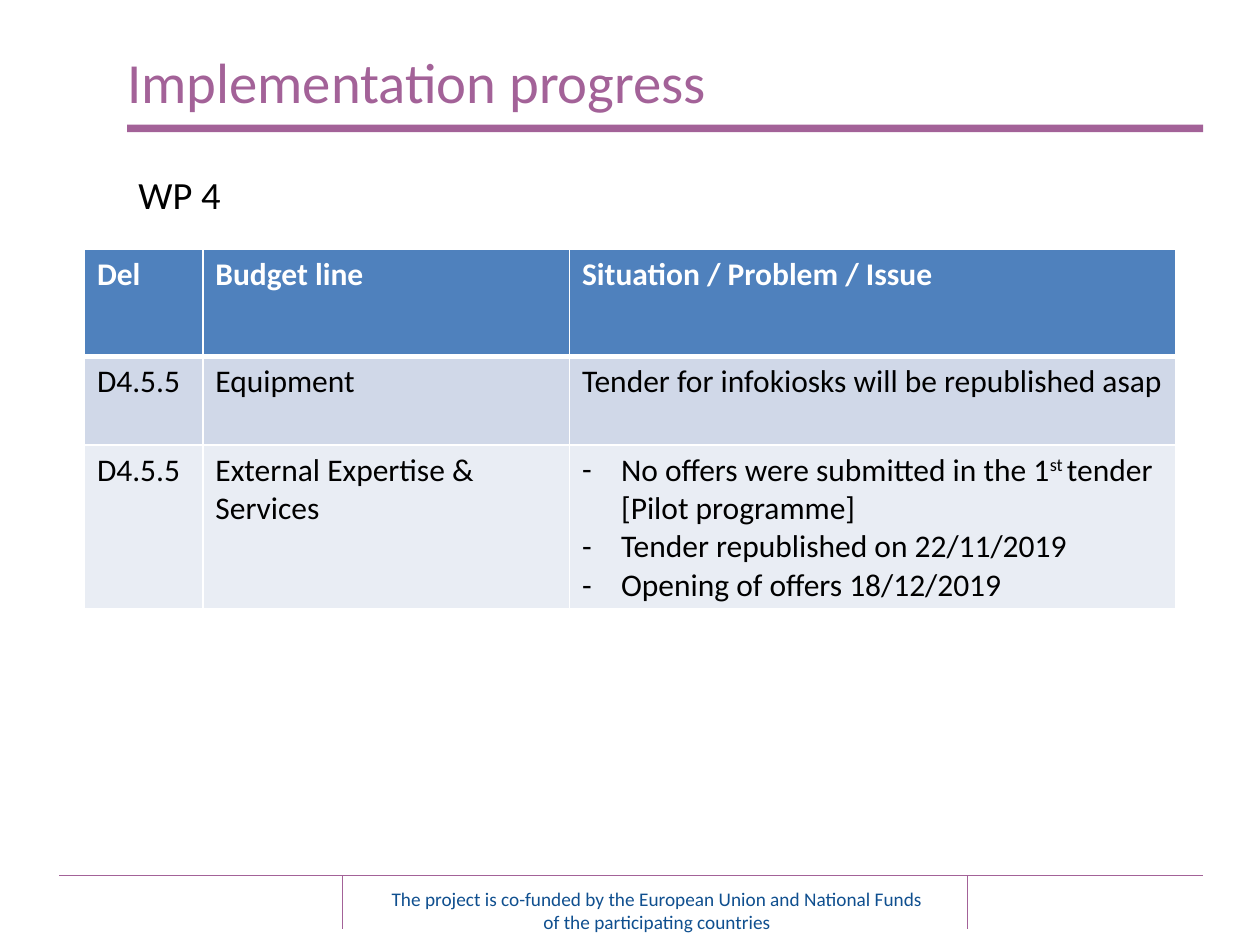
from lxml import etree
from pptx import Presentation
from pptx.dml.color import RGBColor
from pptx.enum.shapes import MSO_CONNECTOR, MSO_SHAPE
from pptx.enum.text import MSO_ANCHOR, PP_ALIGN
from pptx.oxml.ns import qn
from pptx.util import Emu, Inches, Pt

STRAIGHT, RECT = MSO_CONNECTOR.STRAIGHT, MSO_SHAPE.RECTANGLE
MIDDLE, LEFT, CENTER = MSO_ANCHOR.MIDDLE, PP_ALIGN.LEFT, PP_ALIGN.CENTER
PURPLE = RGBColor(0xA3, 0x62, 0x98)
NAVY = RGBColor(0x0F, 0x4F, 0x8F)
BLACK = RGBColor(0, 0, 0)
WHITE = RGBColor(255, 255, 255)
HEADER_FILL = RGBColor(0x4F, 0x81, 0xBD)
BAND_FILLS = [RGBColor(0xD0, 0xD8, 0xE8), RGBColor(0xE9, 0xED, 0xF4)]
FONT = "Calibri"

TITLE = "Implementation progress"
SUBTITLE = "WP 4"
FOOTER = [
    "The project is co-funded by the European Union and National Funds",
    "of the participating countries",
]
ROWS = [
    ["Del", "Budget line", "Situation / Problem / Issue"],
    ["D4.5.5", "Equipment", "Tender for infokiosks will be republished asap"],
    ["D4.5.5", "External Expertise & Services", [
        [("No offers were submitted in the 1", False), ("st ", True),
         ("tender [Pilot programme]", False)],
        [("Tender republished on 22/11/2019", False)],
        [("Opening of offers 18/12/2019", False)],
    ]],
]
COL_WIDTHS = [0.94, 2.91, 4.81]
ROW_HEIGHTS = [0.85, 0.7, 1.3]
TABLE_LEFT, TABLE_TOP = 0.67, 1.98
RULE_LEFT, RULE_RIGHT, RULE_Y, TICK_BOTTOM = 0.47, 9.55, 6.95, 7.37
TICKS = [2.72, 7.68]


def add_run(p, text, size, color, bold=False, raised=False):
    r = p.add_run()
    r.text = text
    r.font.name, r.font.size, r.font.bold = FONT, Pt(size), bold
    r.font.color.rgb = color
    if raised:
        r.font._element.set("baseline", "30000")


def add_box(s, left, top, width, height):
    tf = s.shapes.add_textbox(*map(Inches, (left, top, width, height))).text_frame
    tf.word_wrap = True
    return tf.paragraphs[0]


def add_line(s, x1, y1, x2, y2):
    line = s.shapes.add_connector(STRAIGHT, *map(Inches, (x1, y1, x2, y2)))
    line.line.color.rgb, line.line.width = PURPLE, Pt(0.75)
    etree.SubElement(line._element.spPr, qn("a:effectLst"))


def add_dash(p):
    pPr = p._p.get_or_add_pPr()
    pPr.set("marL", str(Inches(0.31)))
    pPr.set("indent", str(-Inches(0.31)))
    etree.SubElement(pPr, qn("a:buFont"), typeface=FONT)
    etree.SubElement(pPr, qn("a:buChar"), char="-")


def format_cell(cell, fill, bottom):
    tcPr = cell._tc.get_or_add_tcPr()
    for side, width in (("lnL", 1), ("lnR", 1), ("lnT", 1), ("lnB", bottom)):
        ln = etree.SubElement(tcPr, qn(f"a:{side}"), w=str(Pt(width)))
        solid = etree.SubElement(ln, qn("a:solidFill"))
        etree.SubElement(solid, qn("a:srgbClr"), val=str(WHITE))
    cell.fill.solid()
    cell.fill.fore_color.rgb = fill


def fill_table(s):
    table = s.shapes.add_table(
        len(ROWS), len(COL_WIDTHS), Inches(TABLE_LEFT), Inches(TABLE_TOP),
        Inches(sum(COL_WIDTHS)), Inches(sum(ROW_HEIGHTS))).table
    for column, width in zip(table.columns, COL_WIDTHS):
        column.width = Inches(width)
    for i, (row, height) in enumerate(zip(ROWS, ROW_HEIGHTS)):
        table.rows[i].height = Inches(height)
        header = i == 0
        fill = HEADER_FILL if header else BAND_FILLS[(i - 1) % 2]
        for j, content in enumerate(row):
            cell = table.cell(i, j)
            format_cell(cell, fill, 3 if i < 1 else 1)
            if i == 1:
                top_line = cell._tc.tcPr.find(qn("a:lnT"))
                top_line.set("w", str(Pt(3)))
            bulleted = isinstance(content, list)
            tf = cell.text_frame
            for k, runs in enumerate(content if bulleted else [[(content, False)]]):
                p = tf.add_paragraph() if k else tf.paragraphs[0]
                if bulleted:
                    add_dash(p)
                for text, raised in runs:
                    add_run(p, text, 18, WHITE if header else BLACK, header, raised)


def main():
    prs = Presentation()
    prs.slide_width, prs.slide_height = Inches(10), Inches(7.5)
    s = prs.slides.add_slide(prs.slide_layouts[5])

    add_line(s, RULE_LEFT, RULE_Y, RULE_RIGHT, RULE_Y)
    for x in TICKS:
        add_line(s, x, RULE_Y, x, TICK_BOTTOM)
    bar = s.shapes.add_shape(RECT, *map(Inches, (1.01, 0.99, RULE_RIGHT - 1.01, 0.06)))
    bar.shadow.inherit = False
    bar.fill.solid()
    bar.fill.fore_color.rgb = PURPLE
    bar.line.fill.background()

    title = s.shapes.title
    title.left, title.top, title.width, title.height = map(Inches, (0.91, 0.3, 8.59, 0.69))
    title.text_frame.vertical_anchor = MIDDLE
    p = title.text_frame.paragraphs[0]
    p.alignment = LEFT
    add_run(p, TITLE, 32.4, PURPLE)

    p = add_box(s, 0.5, 1.31, 9, 0.5)
    p._p.get_or_add_pPr().set("marL", str(Emu(Inches(0.5))))
    add_run(p, SUBTITLE, 22, BLACK)

    fill_table(s)

    p = add_box(s, 2.75, 6.99, 4.93, 0.47)
    p.alignment = CENTER
    for i, line in enumerate(FOOTER):
        if i:
            p.add_line_break()
        add_run(p, line, 11, NAVY)

    prs.save("out.pptx")


if __name__ == "__main__":
    main()
